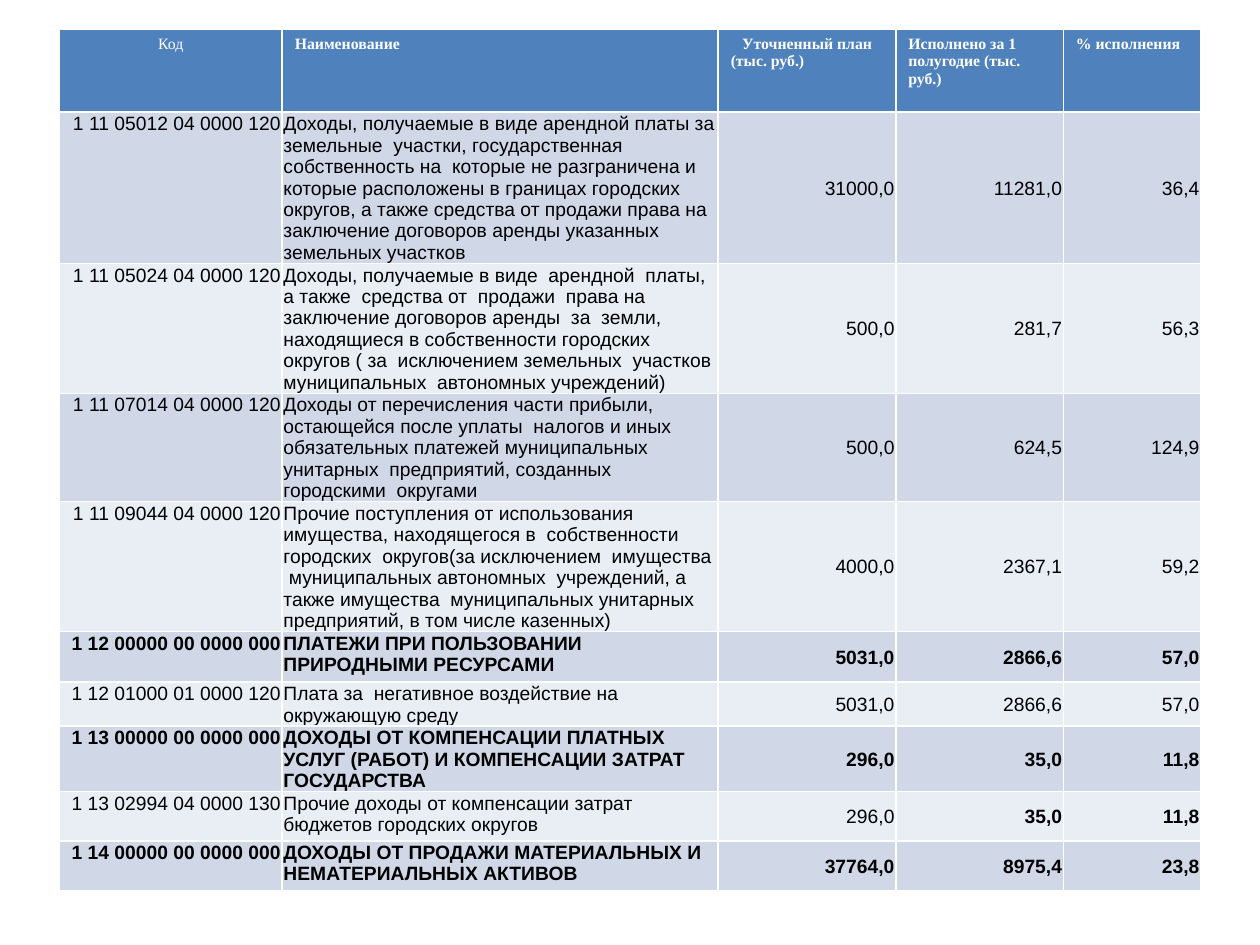
"""Builds a slide with a table of budget income: plan, actual and share done."""
from pptx import Presentation
from pptx.dml.color import RGBColor
from pptx.enum.text import MSO_ANCHOR, PP_ALIGN
from pptx.util import Inches, Pt

LEFT, MID, RIGHT = PP_ALIGN.LEFT, PP_ALIGN.CENTER, PP_ALIGN.RIGHT
TOP, CENTRE = MSO_ANCHOR.TOP, MSO_ANCHOR.MIDDLE
BLUE = RGBColor(0x4F, 0x81, 0xBD)
DARK = RGBColor(0xD0, 0xD8, 0xE8)
PALE = RGBColor(0xE9, 0xED, 0xF4)
WHITE = RGBColor(0xFF, 0xFF, 0xFF)
BLACK = RGBColor(0, 0, 0)

WIDTHS = [1.77, 3.46, 1.41, 1.33, 1.09]
HEIGHTS = [0.66, 1.2, 1.03, 0.86, 1.03, 0.4, 0.35, 0.52, 0.39, 0.4]
HEADS = ["Код", "Наименование", "Уточненный план\n(тыс. руб.)",
         "Исполнено за 1 полугодие (тыс. руб.)", "% исполнения"]
ROWS = [
    ["1 11 05012 04 0000 120",
     "Доходы, получаемые в виде арендной платы за земельные  участки, "
     "государственная собственность на  которые не разграничена и которые "
     "расположены в границах городских округов, а также средства от продажи "
     "права на заключение договоров аренды указанных земельных участков",
     "31000,0", "11281,0", "36,4"],
    ["1 11 05024 04 0000 120",
     "Доходы, получаемые в виде  арендной  платы, а также  средства от  "
     "продажи  права на  заключение договоров аренды  за  земли, находящиеся "
     "в собственности городских  округов ( за  исключением земельных  "
     "участков муниципальных  автономных учреждений)",
     "500,0", "281,7", "56,3"],
    ["1 11 07014 04 0000 120",
     "Доходы от перечисления части прибыли, остающейся после уплаты  налогов "
     "и иных обязательных платежей муниципальных унитарных  предприятий, "
     "созданных городскими  округами",
     "500,0", "624,5", "124,9"],
    ["1 11 09044 04 0000 120",
     "Прочие поступления от использования имущества, находящегося в  "
     "собственности  городских  округов(за исключением  имущества  "
     "муниципальных автономных  учреждений, а также имущества  муниципальных "
     "унитарных  предприятий, в том числе казенных)",
     "4000,0", "2367,1", "59,2"],
    ["1 12 00000 00 0000 000", "ПЛАТЕЖИ ПРИ ПОЛЬЗОВАНИИ ПРИРОДНЫМИ РЕСУРСАМИ",
     "5031,0", "2866,6", "57,0"],
    ["1 12 01000 01 0000 120",
     "Плата за  негативное воздействие на  окружающую среду",
     "5031,0", "2866,6", "57,0"],
    ["1 13 00000 00 0000 000",
     "ДОХОДЫ ОТ КОМПЕНСАЦИИ ПЛАТНЫХ УСЛУГ (РАБОТ) И КОМПЕНСАЦИИ ЗАТРАТ "
     "ГОСУДАРСТВА",
     "296,0", "35,0", "11,8"],
    ["1 13 02994 04 0000 130",
     "Прочие доходы от компенсации затрат бюджетов городских округов",
     "296,0", "35,0", "11,8"],
    ["1 14 00000 00 0000 000",
     "ДОХОДЫ ОТ ПРОДАЖИ МАТЕРИАЛЬНЫХ И НЕМАТЕРИАЛЬНЫХ АКТИВОВ",
     "37764,0", "8975,4", "23,8"],
]
BOLD_EXTRA = {(8, 3), (8, 4)}


def fill_cell(cell, text, fill, font, size, color, bold, align):
    cell.fill.solid()
    cell.fill.fore_color.rgb = fill
    cell.text_frame.text = text
    for par in cell.text_frame.paragraphs:
        par.alignment = align
        for run in par.runs:
            run.font.name = font
            run.font.size = Pt(size)
            run.font.bold = bold
            run.font.color.rgb = color


deck = Presentation()
deck.slide_width, deck.slide_height = Inches(10), Inches(7.5)
slide = deck.slides.add_slide(deck.slide_layouts[6])
table = slide.shapes.add_table(
    len(HEIGHTS), len(WIDTHS), Inches(0.47), Inches(0.23),
    Inches(sum(WIDTHS)), Inches(sum(HEIGHTS))).table
for col, width in zip(table.columns, WIDTHS):
    col.width = Inches(width)
for row, height in zip(table.rows, HEIGHTS):
    row.height = Inches(height)

for c, head in enumerate(HEADS):
    fill_cell(table.cell(0, c), head, BLUE, "Times New Roman", 9, WHITE,
              c > 0, MID if c == 0 else LEFT)
table.cell(0, 2).text_frame.paragraphs[0].alignment = MID

for r, row in enumerate(ROWS, 1):
    total = "00 0000 000" in row[0]
    for c, text in enumerate(row):
        cell = table.cell(r, c)
        fill_cell(cell, text, DARK if r % 2 else PALE, "Arial", 11, BLACK,
                  total or (r, c) in BOLD_EXTRA, LEFT if c == 1 else RIGHT)
        cell.margin_left = cell.margin_right = cell.margin_top = Inches(0.01)
        cell.margin_bottom = 0
        cell.vertical_anchor = CENTRE if c > 1 else TOP

deck.save("out.pptx")
